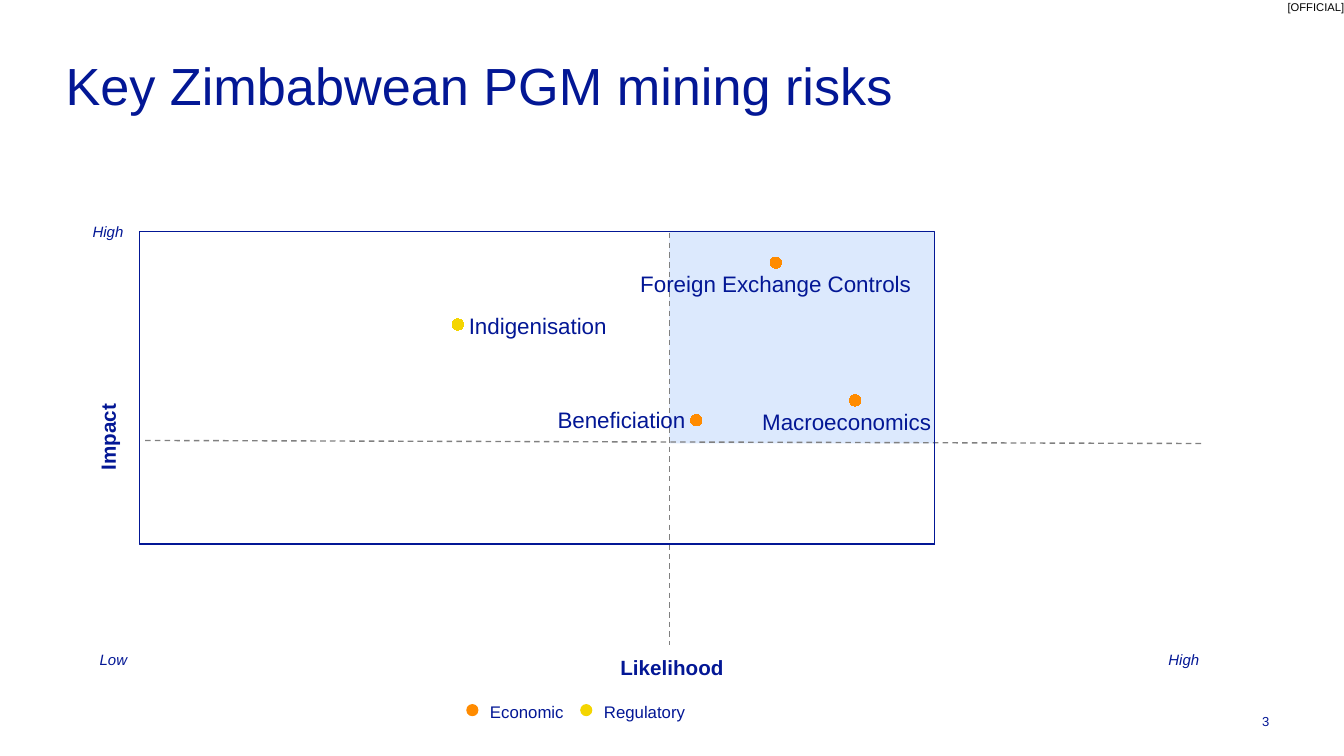
import dataclasses

import pptx
import pptx.chart.data
import pptx.dml.color
import pptx.enum.chart
import pptx.enum.dml
import pptx.enum.shapes
import pptx.enum.text
import pptx.oxml
import pptx.oxml.ns
import pptx.util
from lxml import etree

Inches = pptx.util.Inches
Pt = pptx.util.Pt
RGB = pptx.dml.color.RGBColor.from_string
qn = pptx.oxml.ns.qn
Align = pptx.enum.text.PP_ALIGN
Anchor = pptx.enum.text.MSO_ANCHOR
Shape = pptx.enum.shapes.MSO_SHAPE


@dataclasses.dataclass(frozen=True)
class Theme:
    font: str = "Arial"
    navy: str = "031795"
    black: str = "000000"
    gray: str = "808080"
    highlight: str = "347FF6"
    economic: str = "FF8B00"
    regulatory: str = "F4D500"
    title: float = 37.3
    risk: float = 16
    axis: float = 14.7
    legend: float = 12
    scale: float = 10.7
    page: float = 9.3
    marking: float = 8


THEME = Theme()
NO_INSET = (0, 0, 0, 0)
BOX_INSET = (0.1, 0.05, 0.1, 0.05)
RISK_INSET = (0.03, 0, 0.03, 0)
BLANK = (None, None)


def style_text(tf, text, size, color=THEME.navy, bold=False, italic=False,
               align=Align.LEFT, anchor=Anchor.TOP, inset=BOX_INSET, wrap=False):
    tf.word_wrap = wrap
    tf.auto_size = pptx.enum.text.MSO_AUTO_SIZE.NONE
    tf.vertical_anchor = anchor
    tf.margin_left, tf.margin_top, tf.margin_right, tf.margin_bottom = map(Inches, inset)
    p = tf.paragraphs[0]
    p.text = text
    p.alignment = align
    p.font.name = THEME.font
    p.font.size = Pt(size)
    p.font.bold = bold
    p.font.italic = italic
    p.font.color.rgb = RGB(color)


def add_text(slide, box, text, size, **style):
    sp = slide.shapes.add_textbox(*map(Inches, box))
    style_text(sp.text_frame, text, size, **style)
    return sp


def add_title(slide, text):
    sp = slide.shapes.title
    sp.left, sp.top, sp.width, sp.height = map(Inches, (0.65, 0.53, 12.17, 1.41))
    style_text(sp.text_frame, text, THEME.title, inset=NO_INSET, wrap=True)


def add_filled_shape(slide, kind, box, color, alpha=None):
    sp = slide.shapes.add_shape(kind, *map(Inches, box))
    sp.shadow.inherit = False
    sp.fill.solid()
    sp.fill.fore_color.rgb = RGB(color)
    sp.line.fill.background()
    if alpha is not None:
        clr = sp.fill._xPr.find(qn("a:solidFill"))[0]
        etree.SubElement(clr, qn("a:alpha")).set("val", str(alpha * 1000))
    return sp


def add_dashed_line(slide, *ends):
    line = slide.shapes.add_connector(
        pptx.enum.shapes.MSO_CONNECTOR.STRAIGHT, *map(Inches, ends))
    line.line.color.rgb = RGB(THEME.gray)
    line.line.width = Pt(1)
    line.line.dash_style = pptx.enum.dml.MSO_LINE.DASH
    etree.SubElement(line._element.spPr, qn("a:effectLst"))


def add_legend_entry(slide, left, text, color):
    dot = add_filled_shape(slide, Shape.OVAL, (left, 6.99, 0.11, 0.11), color)
    dot.line.color.rgb = RGB(color)
    dot.line.width = Pt(0.75)
    add_text(slide, (left + 0.23, 6.96, 0.8, 0.2), text, THEME.legend,
             anchor=Anchor.MIDDLE, inset=NO_INSET)


def style_axis(axis, maximum):
    axis.minimum_scale = 0
    axis.maximum_scale = maximum
    axis.has_major_gridlines = False
    axis.has_minor_gridlines = False
    axis.major_tick_mark = axis.minor_tick_mark = pptx.enum.chart.XL_TICK_MARK.NONE
    axis.tick_label_position = pptx.enum.chart.XL_TICK_LABEL_POSITION.NONE
    axis.format.line.color.rgb = RGB(THEME.navy)
    axis.format.line.width = Pt(0.75)


def frame_plot(chart):
    """Fix the inner plot position and outline it."""
    plot_area = chart._chartSpace.chart.plotArea
    for old in plot_area.findall(qn("c:layout")):
        plot_area.remove(old)
    ns = pptx.oxml.ns.nsdecls("c", "a")
    plot_area.insert(0, pptx.oxml.parse_xml(
        f'<c:layout {ns}><c:manualLayout><c:layoutTarget val="inner"/>'
        '<c:xMode val="edge"/><c:yMode val="edge"/><c:x val="0.011"/>'
        '<c:y val="0.027"/><c:w val="0.978"/><c:h val="0.945"/>'
        '</c:manualLayout></c:layout>'))
    plot_area.append(pptx.oxml.parse_xml(
        f'<c:spPr {ns}><a:noFill/><a:ln w="9525"><a:solidFill>'
        f'<a:srgbClr val="{THEME.navy}"/></a:solidFill></a:ln></c:spPr>'))


def clear_blank_points(chart):
    """Leave unfilled points empty in the stored values."""
    for pt in list(chart._chartSpace.iter(qn("c:pt"))):
        if pt.find(qn("c:v")).text in (None, "", "None"):
            pt.getparent().remove(pt)


def add_risk_chart(slide, groups):
    data = pptx.chart.data.XyChartData()
    for name, _, points in groups:
        series = data.add_series(name)
        for x, y in points:
            series.add_data_point(x, y)
    chart = slide.shapes.add_chart(
        pptx.enum.chart.XL_CHART_TYPE.XY_SCATTER,
        *map(Inches, (1.3, 2.21, 8.06, 3.28)), data).chart
    clear_blank_points(chart)
    chart.has_legend = False
    chart.has_title = False
    chart.font.name = THEME.font
    chart.font.size = Pt(10)
    chart.font.color.rgb = RGB(THEME.navy)
    chart.plots[0].vary_by_categories = False
    style_axis(chart.category_axis, 5)
    style_axis(chart.value_axis, 111)
    for series, (_, color, _) in zip(chart.plots[0].series, groups):
        series.smooth = False
        series.format.line.fill.background()
        marker = series.marker
        marker.style = pptx.enum.chart.XL_MARKER_STYLE.CIRCLE
        marker.size = 8
        marker.format.fill.solid()
        marker.format.fill.fore_color.rgb = RGB(color)
        marker.format.line.color.rgb = RGB(color)
    frame_plot(chart)


def main():
    prs = pptx.Presentation()
    prs.slide_width, prs.slide_height = Inches(13.33), Inches(7.5)
    slide = prs.slides.add_slide(prs.slide_layouts[5])

    # Marking, title and page number
    add_text(slide, (12.77, 0, 0.56, 0.13), "[OFFICIAL]", THEME.marking,
             color=THEME.black, inset=NO_INSET)
    add_title(slide, "Key Zimbabwean PGM mining risks")
    add_text(slide, (12.42, 7.03, 0.5, 0.26), "3", THEME.page)

    # High-risk quadrant and dividers
    add_filled_shape(slide, Shape.RECTANGLE, (6.64, 2.29, 2.63, 2.11),
                     THEME.highlight, alpha=17)
    add_dashed_line(slide, 1.44, 4.37, 11.94, 4.4)
    add_dashed_line(slide, 6.64, 2.31, 6.64, 6.4)

    # Axis names and scale ends
    impact = add_text(slide, (0.64, 4.16, 0.86, 0.35), "Impact", THEME.axis,
                      bold=True, align=Align.CENTER)
    impact.rotation = 270
    add_text(slide, (5.94, 6.45, 1.45, 0.35), "Likelihood", THEME.axis,
             bold=True, align=Align.CENTER)
    for left, top, text in ((11.49, 6.4, "High"), (0.82, 2.16, "High"), (0.89, 6.4, "Low")):
        add_text(slide, (left, top, 0.51, 0.28), text, THEME.scale, italic=True)

    # Risks by likelihood and impact, one row per risk
    add_risk_chart(slide, (
        ("Series 1", THEME.economic, ((4, 100), (3.5, 44), (4.5, 51), BLANK)),
        ("Series 2", THEME.regulatory, (BLANK, BLANK, BLANK, (2, 78))),
    ))
    for left, top, width, text in (
        (6.32, 2.68, 2.75, "Foreign Exchange Controls"),
        (4.62, 3.09, 1.43, "Indigenisation"),
        (5.5, 4.03, 1.33, "Beneficiation"),
        (7.53, 4.05, 1.74, "Macroeconomics"),
    ):
        add_text(slide, (left, top, width, 0.27), text, THEME.risk,
                 anchor=Anchor.MIDDLE, inset=RISK_INSET)

    # Legend
    add_legend_entry(slide, 4.63, "Economic", THEME.economic)
    add_legend_entry(slide, 5.76, "Regulatory", THEME.regulatory)

    prs.save("out.pptx")


if __name__ == "__main__":
    main()
